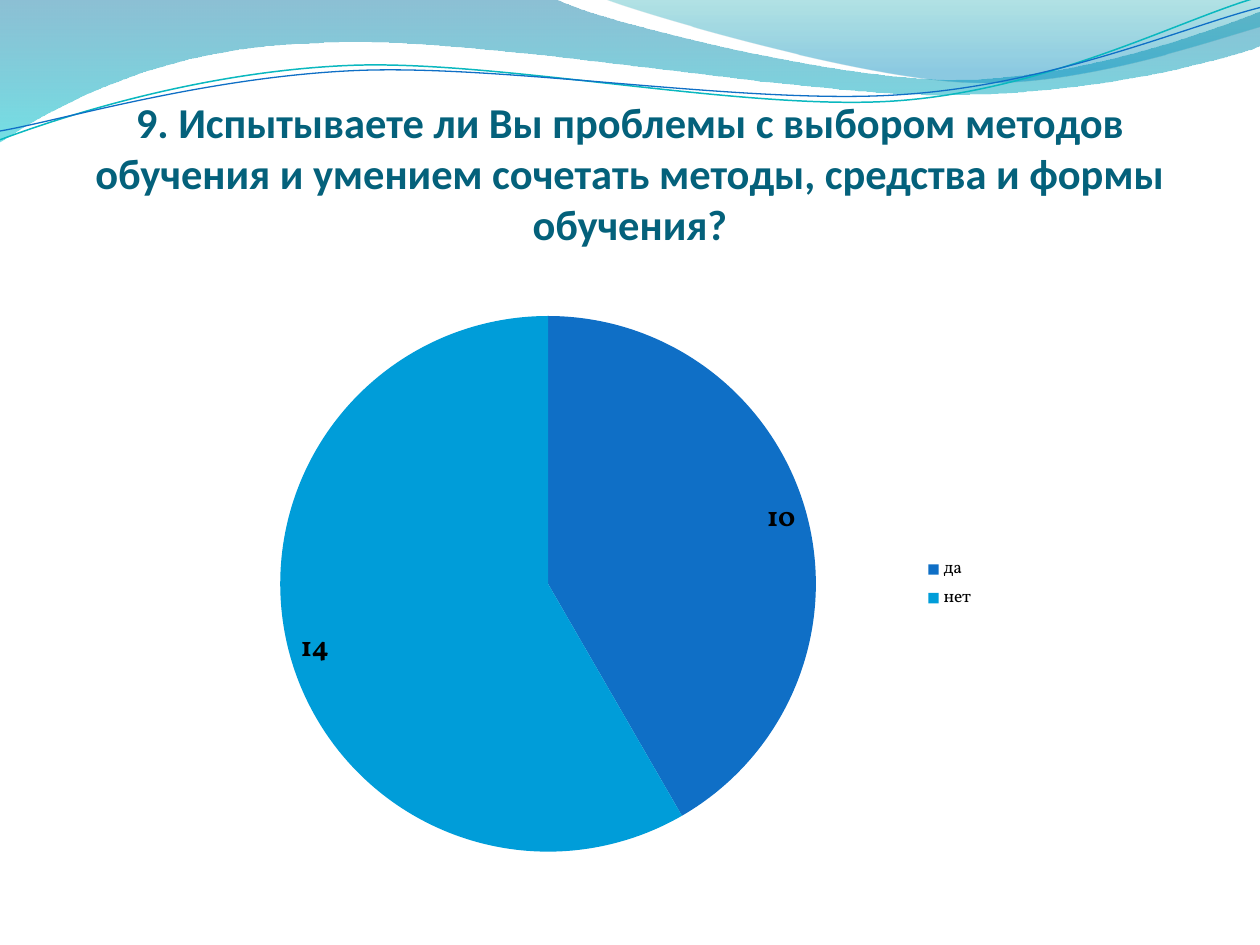
from lxml import etree
from pptx import Presentation
from pptx.chart.data import CategoryChartData
from pptx.dml.color import RGBColor
from pptx.enum.chart import XL_CHART_TYPE, XL_LEGEND_POSITION
from pptx.enum.text import MSO_ANCHOR, PP_ALIGN
from pptx.oxml.ns import qn
from pptx.util import Cm, Pt

PIE = XL_CHART_TYPE.PIE
LEGEND_RIGHT = XL_LEGEND_POSITION.RIGHT
TOP = MSO_ANCHOR.TOP
CENTER = PP_ALIGN.CENTER

COLORS = {
    "title": "04617B", "text": "000000",
    "yes": "0F6FC6", "no": "009DD9",
    "teal_line": "0AB8BF", "blue_line": "0F6FC6",
    "deep": "0074A1", "aqua": "00C6CF",
    "green": "00A1A9", "sky": "008BBF",
}
GRID = 1000

BANDS = [
    ([(0, 0), (440, -1), (476, 17, 664, 63, 758, 63),
      (853, 63, 958, 26, 1000, 9), (1001, 36),
      (983, 44, 870, 76, 746, 75), (622, 75, 382, 28, 257, 34),
      (129, 36, 46, 83, -1, 113)],
     [(0, "deep", 45), (1, "aqua", 55)]),
    ([(479, -1), (509, 11, 682, 62, 769, 65),
      (856, 69, 961, 32, 1000, 21), (1000, 0)],
     [(0, "green", 30), (0.8, "sky", 45)]),
]
LINES = [
    ([(0, 111), (48, 93, 158, 57, 277, 52), (395, 47, 593, 89, 713, 80),
      (833, 71, 938, 15, 998, -2)], "teal_line", 0.85),
    ([(0, 104), (47, 96, 164, 61, 283, 56), (403, 51, 597, 84, 717, 75),
      (836, 67, 941, 21, 1000, 6)], "blue_line", 0.75),
]


def rgb(name):
    """Return the named colour."""
    return RGBColor.from_string(COLORS[name])


def bend(sp, steps):
    """Merge each three segments of a curve step into one cubic curve."""
    segments = iter(list(sp._element.iter(qn("a:lnTo"))))
    for step in steps[1:]:
        first = next(segments)
        if len(step) == 2:
            continue
        curve = etree.Element(qn("a:cubicBezTo"))
        first.addprevious(curve)
        for segment in (first, next(segments), next(segments)):
            curve.append(segment[0])
            segment.getparent().remove(segment)


def add_outline(s, steps, box, close):
    """Add a curved freeform drawn on a grid that spans the box width."""
    left, top, width = box[:3]
    points = [step[i:i + 2] for step in steps for i in range(0, len(step), 2)]
    builder = s.shapes.build_freeform(*points[0], scale=width / GRID)
    builder.add_line_segments(points[1:], close=close)
    sp = builder.convert_to_shape(left, top)
    sp.shadow.inherit = False
    bend(sp, steps)
    return sp


def fill_gradient(sp, stops):
    """Give a shape a downward gradient with translucent stops."""
    sp.fill.gradient()
    sp.fill.gradient_angle = 270
    for stop, (position, color, _) in zip(sp.fill.gradient_stops, stops):
        stop.position = position
        stop.color.rgb = rgb(color)
    grad = sp._element.spPr.find(qn("a:gradFill"))
    for clr, (_, _, opacity) in zip(grad.iter(qn("a:srgbClr")), stops):
        etree.SubElement(clr, qn("a:alpha")).set("val", str(opacity * 1000))


def add_waves(s, box):
    """Draw the wave decoration along the top of the slide."""
    for steps, stops in BANDS:
        sp = add_outline(s, steps, box, True)
        fill_gradient(sp, stops)
        sp.line.fill.background()
    for steps, color, weight in LINES:
        sp = add_outline(s, steps, box, False)
        sp.fill.background()
        sp.line.color.rgb = rgb(color)
        sp.line.width = Pt(weight)


def add_title(s, box, text):
    """Add the centred question."""
    tf = s.shapes.add_textbox(*box).text_frame
    tf.word_wrap = True
    tf.vertical_anchor = TOP
    tf.margin_left = tf.margin_right = tf.margin_bottom = 0
    tf.margin_top = Cm(0.05)
    p = tf.paragraphs[0]
    p.alignment = CENTER
    r = p.add_run()
    r.text = text
    r.font.name = "Calibri"
    r.font.size = Pt(24.3)
    r.font.bold = True
    r.font.color.rgb = rgb("title")


def style_font(font, size, bold=False):
    """Set the chart font."""
    font.name = "Vollkorn"
    font.size = Pt(size)
    font.bold = bold
    font.color.rgb = rgb("text")


def add_answers(s, box, answers):
    """Add the pie chart of answers with its legend."""
    data = CategoryChartData()
    data.categories = [name for name, _, _ in answers]
    data.add_series("Series 1", [count for _, count, _ in answers])
    chart = s.shapes.add_chart(PIE, *box, data).chart
    style_font(chart.font, 10)
    chart.has_title = False
    chart.has_legend = True
    chart.legend.position = LEGEND_RIGHT
    chart.legend.include_in_layout = False
    plot = chart.plots[0]
    plot.vary_by_categories = True
    for i, (_, _, color) in enumerate(answers):
        fill = plot.series[0].points[i].format.fill
        fill.solid()
        fill.fore_color.rgb = rgb(color)
    plot.has_data_labels = True
    labels = plot.data_labels
    labels.show_value = True
    labels.show_percentage = False
    style_font(labels.font, 16, True)


def main():
    """Build and save the slide."""
    prs = Presentation()
    prs.slide_width, prs.slide_height = Cm(25.4), Cm(19.05)
    s = prs.slides.add_slide(prs.slide_layouts[6])
    add_waves(s, (0, 0, prs.slide_width, Cm(2.9)))
    add_title(s, (Cm(1.27), Cm(1.88), Cm(22.86), Cm(4.98)),
              "9. Испытываете ли Вы проблемы с выбором методов обучения "
              "и умением сочетать методы, средства и формы обучения?")
    add_answers(s, (Cm(3.5), Cm(6.02), Cm(16.4), Cm(11.5)),
                [("да", 10, "yes"), ("нет", 14, "no")])
    prs.save("out.pptx")


if __name__ == "__main__":
    main()
